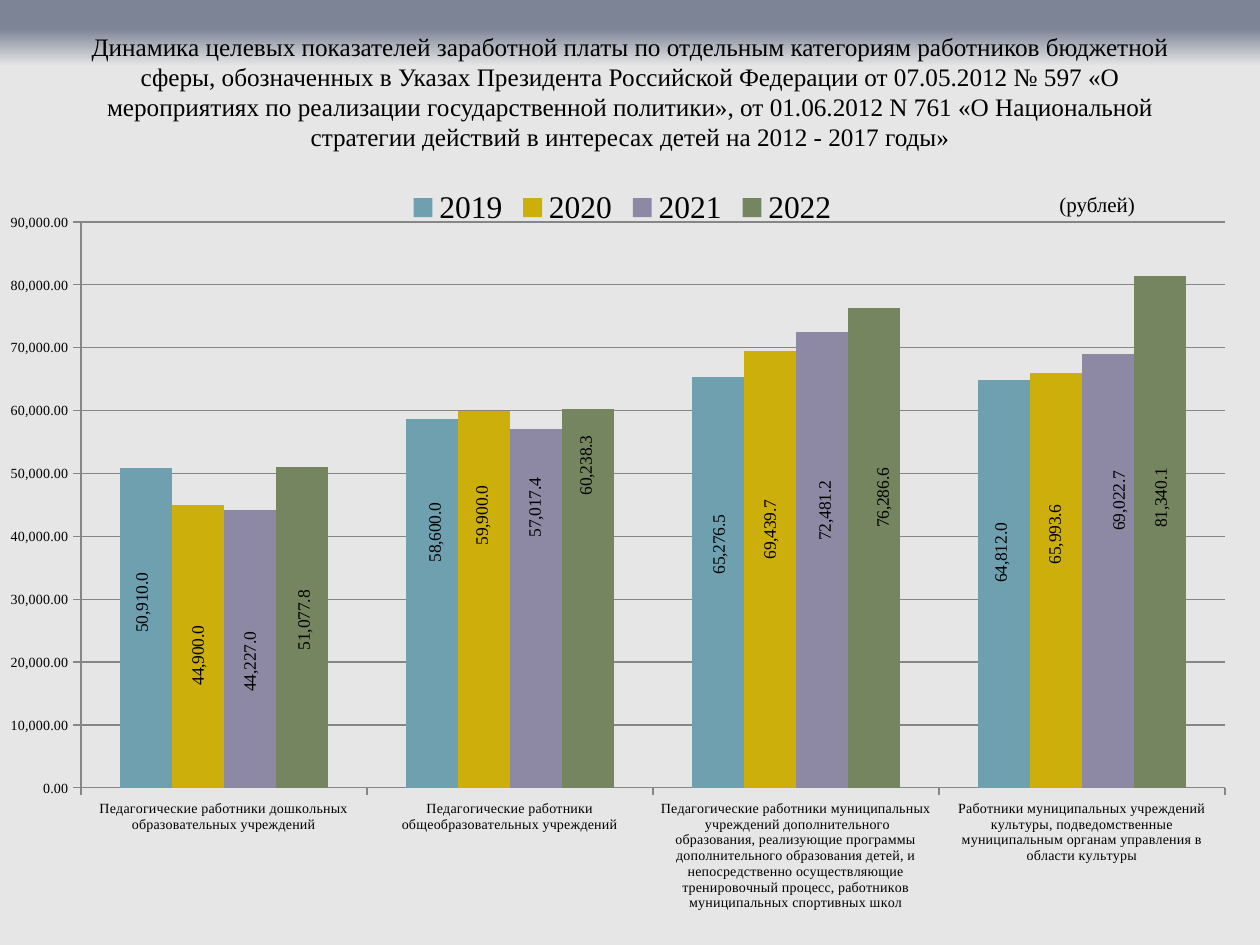
import lxml.etree
import pptx
import pptx.chart.data
import pptx.dml.color
import pptx.enum.chart
import pptx.enum.text
import pptx.oxml
import pptx.oxml.ns
import pptx.util

PX = 914400 / 126
FONT = "Times New Roman"
BLACK = pptx.dml.color.RGBColor(0x00, 0x00, 0x00)
GRAY = pptx.dml.color.RGBColor(0x86, 0x86, 0x86)
SLATE = pptx.dml.color.RGBColor(0x7D, 0x84, 0x96)
LIGHT = pptx.dml.color.RGBColor(0xE6, 0xE6, 0xE6)
TEAL = pptx.dml.color.RGBColor(0x6E, 0xA0, 0xB0)
GOLD = pptx.dml.color.RGBColor(0xCC, 0xAF, 0x0A)
VIOLET = pptx.dml.color.RGBColor(0x8D, 0x89, 0xA4)
GREEN = pptx.dml.color.RGBColor(0x74, 0x85, 0x60)

TITLE = (
    "Динамика целевых показателей заработной платы по отдельным категориям "
    "работников бюджетной сферы, обозначенных в Указах Президента Российской "
    "Федерации от 07.05.2012 № 597 «О мероприятиях по реализации "
    "государственной политики», от 01.06.2012 N 761 «О Национальной стратегии "
    "действий в интересах детей на 2012 - 2017 годы»"
)
CATEGORIES = [
    "Педагогические работники дошкольных образовательных учреждений",
    "Педагогические работники общеобразовательных учреждений",
    "Педагогические работники муниципальных  учреждений дополнительного "
    "образования, реализующие программы дополнительного образования детей, и "
    "непосредственно осуществляющие тренировочный процесс, работников "
    "муниципальных спортивных школ",
    "Работники муниципальных учреждений культуры, подведомственные "
    "муниципальным органам управления в области культуры",
]
SERIES = [
    ("2019", TEAL, [50910, 58600, 65276.5, 64812],
     [(-4, -25), (3, -71), (1, -38), (-3, -31)]),
    ("2020", GOLD, [44900, 59900, 69439.7, 65993.6],
     [(0, 9), (-2, -84), (0, -40), (-1, -46)]),
    ("2021", VIOLET, [44227, 57017.4, 72481.2, 69022.7],
     [(0, 13), (-1, -101), (3, -49), (11, -70)]),
    ("2022", GREEN, [51077.8, 60238.3, 76286.6, 81340.1],
     [(2, -7), (-2, -133), (9, -50), (1, -34)]),
]


def px(n):
    return round(n * PX)


def set_font(font, size):
    font.name = FONT
    font.size = pptx.util.Pt(size)
    font.color.rgb = BLACK
    font.bold = False


def layout_xml(**values):
    items = "".join(f'<c:{k} val="{v}"/>' for k, v in values.items())
    return pptx.oxml.parse_xml(
        f'<c:layout {pptx.oxml.ns.nsdecls("c")}>'
        f"<c:manualLayout>{items}</c:manualLayout></c:layout>"
    )


def paint_background(s):
    fill = s.background.fill
    fill.gradient()
    fill.gradient_angle = 270
    stops = s._element.xpath(".//a:gsLst")[0]
    for stop in list(stops):
        stops.remove(stop)
    for pos, color in ((0, SLATE), (3, SLATE), (7, LIGHT), (100, LIGHT)):
        stops.append(pptx.oxml.parse_xml(
            f'<a:gs {pptx.oxml.ns.nsdecls("a")} pos="{pos * 1000}">'
            f'<a:srgbClr val="{color}"/></a:gs>'
        ))


def add_title(s, x, y, w, h):
    sp = s.shapes.title
    sp.left, sp.top, sp.width, sp.height = px(x), px(y), px(w), px(h)
    tf = sp.text_frame
    tf.word_wrap = True
    tf.auto_size = pptx.enum.text.MSO_AUTO_SIZE.NONE
    tf.vertical_anchor = pptx.enum.text.MSO_ANCHOR.MIDDLE
    tf.text = TITLE
    p = tf.paragraphs[0]
    p.alignment = pptx.enum.text.PP_ALIGN.CENTER
    set_font(p.font, 14.4)


def add_unit(s, x, y, w, h):
    tf = s.shapes.add_textbox(px(x), px(y), px(w), px(h)).text_frame
    tf.word_wrap = True
    tf.auto_size = pptx.enum.text.MSO_AUTO_SIZE.SHAPE_TO_FIT_TEXT
    tf.text = "(рублей)"
    set_font(tf.paragraphs[0].font, 12)


def format_axis(axis):
    set_font(axis.tick_labels.font, 8)
    axis.major_tick_mark = pptx.enum.chart.XL_TICK_MARK.OUTSIDE
    axis.minor_tick_mark = pptx.enum.chart.XL_TICK_MARK.NONE
    axis.format.line.color.rgb = GRAY
    axis.format.line.width = pptx.util.Pt(0.75)


def hide_leader_lines(series):
    labels = series._element.xpath("./c:dLbls")[0]
    for old in labels.xpath("./c:showLeaderLines | ./c:leaderLines | ./c:extLst"):
        labels.remove(old)
    lines = lxml.etree.SubElement(labels, pptx.oxml.ns.qn("c:showLeaderLines"))
    lines.set("val", "0")
    labels.append(pptx.oxml.parse_xml(
        f'<c:extLst {pptx.oxml.ns.nsdecls("c")}>'
        '<c:ext uri="{CE6537A1-D6FC-4f65-9D91-7224C49458BB}" '
        'xmlns:c15="http://schemas.microsoft.com/office/drawing/2012/chart">'
        '<c15:showLeaderLines val="0"/></c:ext></c:extLst>'
    ))


def format_labels(series, offsets, w, h):
    center = pptx.enum.chart.XL_LABEL_POSITION.CENTER
    for i in range(len(offsets)):
        label = series.points[i].data_label
        set_font(label.font, 10)
        label.position = center
    labels = series.data_labels
    set_font(labels.font, 10)
    labels.number_format = "#,##0.0"
    labels.number_format_is_linked = False
    labels.show_value = True
    labels.position = center
    for body in series._element.xpath("./c:dLbls//a:bodyPr"):
        body.set("rot", "-5400000")
        body.set("vert", "horz")
    indexes = series._element.xpath("./c:dLbls/c:dLbl/c:idx")
    for idx, (dx, dy) in zip(indexes, offsets):
        number = lxml.etree.Element(pptx.oxml.ns.qn("c:numFmt"))
        number.set("formatCode", "#,##0.0")
        number.set("sourceLinked", "0")
        idx.addnext(number)
        idx.addnext(layout_xml(x=round(dx / w, 4), y=round(dy / h, 4)))
    hide_leader_lines(series)


def add_salary_chart(s, x, y, w, h):
    data = pptx.chart.data.CategoryChartData(number_format="#,##0.0")
    data.categories = CATEGORIES
    for name, color, values, offsets in SERIES:
        data.add_series(name, values)
    chart = s.shapes.add_chart(
        pptx.enum.chart.XL_CHART_TYPE.COLUMN_CLUSTERED,
        px(x), px(y), px(w), px(h), data,
    ).chart
    chart.has_title = False
    set_font(chart.font, 18)
    chart.font.name = "Calibri"
    chart.has_legend = True
    chart.legend.position = pptx.enum.chart.XL_LEGEND_POSITION.TOP
    chart.legend.include_in_layout = False
    set_font(chart.legend.font, 18)

    format_axis(chart.category_axis)
    axis = chart.value_axis
    format_axis(axis)
    axis.minimum_scale, axis.maximum_scale, axis.major_unit = 0, 90000, 10000
    axis.tick_labels.number_format = "#,##0.00"
    axis.tick_labels.number_format_is_linked = False
    axis.has_major_gridlines = True
    axis.major_gridlines.format.line.color.rgb = GRAY
    axis.major_gridlines.format.line.width = pptx.util.Pt(0.75)

    plot = chart.plots[0]
    plot.gap_width = 150
    plot.overlap = 0
    plot.vary_by_categories = False
    for series, (name, color, values, offsets) in zip(plot.series, SERIES):
        series.format.fill.solid()
        series.format.fill.fore_color.rgb = color
        series.invert_if_negative = False
        format_labels(series, offsets, w, h)

    area = chart._chartSpace.xpath(".//c:plotArea")[0]
    for old in area.xpath("./c:layout"):
        area.remove(old)
    area.insert(0, layout_xml(
        layoutTarget="inner", xMode="edge", yMode="edge",
        x=0.065, y=0.061, w=0.919, h=0.735,
    ))


def main():
    prs = pptx.Presentation()
    prs.slide_width, prs.slide_height = px(1260), px(945)
    s = prs.slides.add_slide(prs.slide_layouts[5])
    paint_background(s)
    add_title(s, 63, 38, 1134, 107)
    add_salary_chart(s, 0, 175, 1245, 770)
    add_unit(s, 1047, 185, 198, 38)
    prs.save("out.pptx")


if __name__ == "__main__":
    main()
